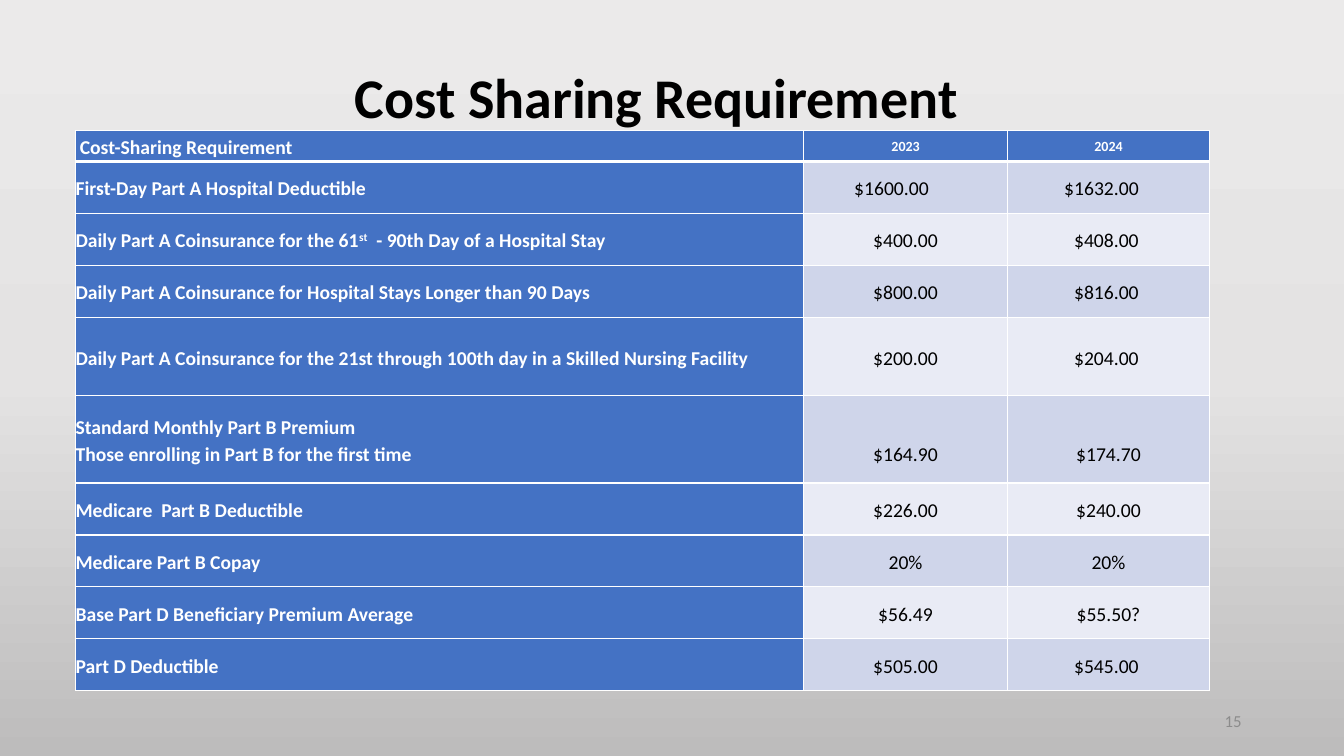
from pptx import Presentation
from pptx.dml.color import RGBColor
from pptx.enum.text import MSO_ANCHOR as Anchor, PP_ALIGN as Align
from pptx.oxml import parse_xml
from pptx.oxml.ns import nsdecls, qn
from pptx.util import Pt

COLORS = {"label": "4472C4", "odd": "CFD5EA", "even": "E9EBF5",
          "white": "FFFFFF", "black": "000000", "number": "8C8C8C"}
BACKGROUND = [(0, "EBEAEA"), (50, "E4E3E3"), (100, "BDBCBC")]
FONT = "Calibri"
TITLE = "Cost Sharing Requirement"
PAGE_NUMBER = "15"

# Label lines, 2023 value, 2024 value
ROWS = [
    (["Cost-Sharing Requirement"], "2023", "2024"),
    (["First-Day Part A Hospital Deductible"], "$1600.00", "$1632.00"),
    (["Daily Part A Coinsurance for the 61^st^  - 90th Day of a Hospital Stay"],
     "$400.00", "$408.00"),
    (["Daily Part A Coinsurance for Hospital Stays Longer than 90 Days"],
     "$800.00", "$816.00"),
    (["Daily Part A Coinsurance for the 21st through 100th day in a Skilled Nursing Facility"],
     "$200.00", "$204.00"),
    (["Standard Monthly Part B Premium", "Those enrolling in Part B for the first time"],
     "$164.90", "$174.70"),
    (["Medicare  Part B Deductible"], "$226.00", "$240.00"),
    (["Medicare Part B Copay"], "20%", "20%"),
    (["Base Part D Beneficiary Premium Average"], "$56.49", "$55.50?"),
    (["Part D Deductible"], "$505.00", "$545.00"),
]
COLUMN_WIDTHS = [520, 145.7, 144.3]
ROW_HEIGHT = 37.15
SPECIAL_HEIGHTS = {0: 22.3, 4: 56, 5: 62.3}
LINE_PITCH = 20
# Right margins that shift centred values, by (row, column)
RIGHT_MARGINS = {(1, 1): 20, (1, 2): 10, (2, 2): 3, (3, 2): 3, (4, 2): 3, (9, 2): 3}


def add_span(para, text, size, color, bold=False):
    span = para.add_run()
    span.text = text
    span.font.name = FONT
    span.font.size = Pt(size)
    span.font.bold = bold
    span.font.color.rgb = RGBColor.from_string(COLORS[color])
    return span


def paint_background(page):
    fill = page.background.fill
    fill.gradient()
    fill.gradient_angle = 270
    stops = page.element.find(".//" + qn("a:gsLst"))
    for stop in list(stops):
        stops.remove(stop)
    for percent, color in BACKGROUND:
        stops.append(parse_xml(
            f'<a:gs {nsdecls("a")} pos="{percent * 1000}"><a:srgbClr val="{color}"/></a:gs>'))


def add_borders(cell, widths):
    """Draw white borders; widths maps the sides L, R, T, B to points."""
    properties = cell._tc.get_or_add_tcPr()
    for side, width in widths.items():
        properties.append(parse_xml(
            f'<a:ln{side} {nsdecls("a")} w="{Pt(width)}"><a:solidFill>'
            f'<a:srgbClr val="{COLORS["white"]}"/></a:solidFill></a:ln{side}>'))


def fill_cell(cell, row, column, lines):
    header, label = row == 0, column == 0
    cell.vertical_anchor = Anchor.MIDDLE
    cell.margin_left = Pt(3 if header and label else 0)
    cell.margin_right = Pt(RIGHT_MARGINS.get((row, column), 0))
    # A value stands beside the last line of its label
    cell.margin_top = Pt(LINE_PITCH * (len(ROWS[row][0]) - len(lines)))
    cell.margin_bottom = Pt(0)
    add_borders(cell, {"L": 1, "R": 1, "T": 3 if row == 1 else 1, "B": 3 if header else 1})
    cell.fill.solid()
    shade = "label" if header or label else "odd" if row % 2 else "even"
    cell.fill.fore_color.rgb = RGBColor.from_string(COLORS[shade])

    size = 10 if header and not label else 14
    strong = header or label
    frame = cell.text_frame
    for index, line in enumerate(lines):
        para = frame.add_paragraph() if index else frame.paragraphs[0]
        para.alignment = Align.LEFT if label else Align.CENTER
        para.line_spacing = 1.15
        for part, text in enumerate(line.split("^")):
            span = add_span(para, text, size, "white" if strong else "black", strong)
            if part % 2:
                span._r.get_or_add_rPr().set("baseline", "30000")


def add_cost_table(page):
    heights = [SPECIAL_HEIGHTS.get(row, ROW_HEIGHT) for row in range(len(ROWS))]
    table = page.shapes.add_table(
        len(ROWS), len(COLUMN_WIDTHS), Pt(54), Pt(93),
        Pt(sum(COLUMN_WIDTHS)), Pt(sum(heights))).table
    for column, width in enumerate(COLUMN_WIDTHS):
        table.columns[column].width = Pt(width)
    for row, (label, *values) in enumerate(ROWS):
        table.rows[row].height = Pt(heights[row])
        for column, lines in enumerate([label] + [[value] for value in values]):
            fill_cell(table.cell(row, column), row, column, lines)


def add_title(page):
    title = page.shapes.title
    title.left, title.top, title.width, title.height = Pt(100), Pt(41), Pt(737.5), Pt(55.5)
    title.text_frame.vertical_anchor = Anchor.TOP
    para = title.text_frame.paragraphs[0]
    para.alignment = Align.CENTER
    add_span(para, TITLE, 40, "black", bold=True)


def add_page_number(page):
    box = page.shapes.add_textbox(Pt(678), Pt(500.5), Pt(216), Pt(28.8))
    box.text_frame.word_wrap = True
    box.text_frame.vertical_anchor = Anchor.MIDDLE
    para = box.text_frame.paragraphs[0]
    para.alignment = Align.RIGHT
    add_span(para, PAGE_NUMBER, 12, "number")


def main():
    deck = Presentation()
    deck.slide_width, deck.slide_height = Pt(960), Pt(540)
    page = deck.slides.add_slide(deck.slide_layouts[5])
    paint_background(page)
    add_title(page)
    add_cost_table(page)
    add_page_number(page)
    deck.save("out.pptx")


if __name__ == "__main__":
    main()
